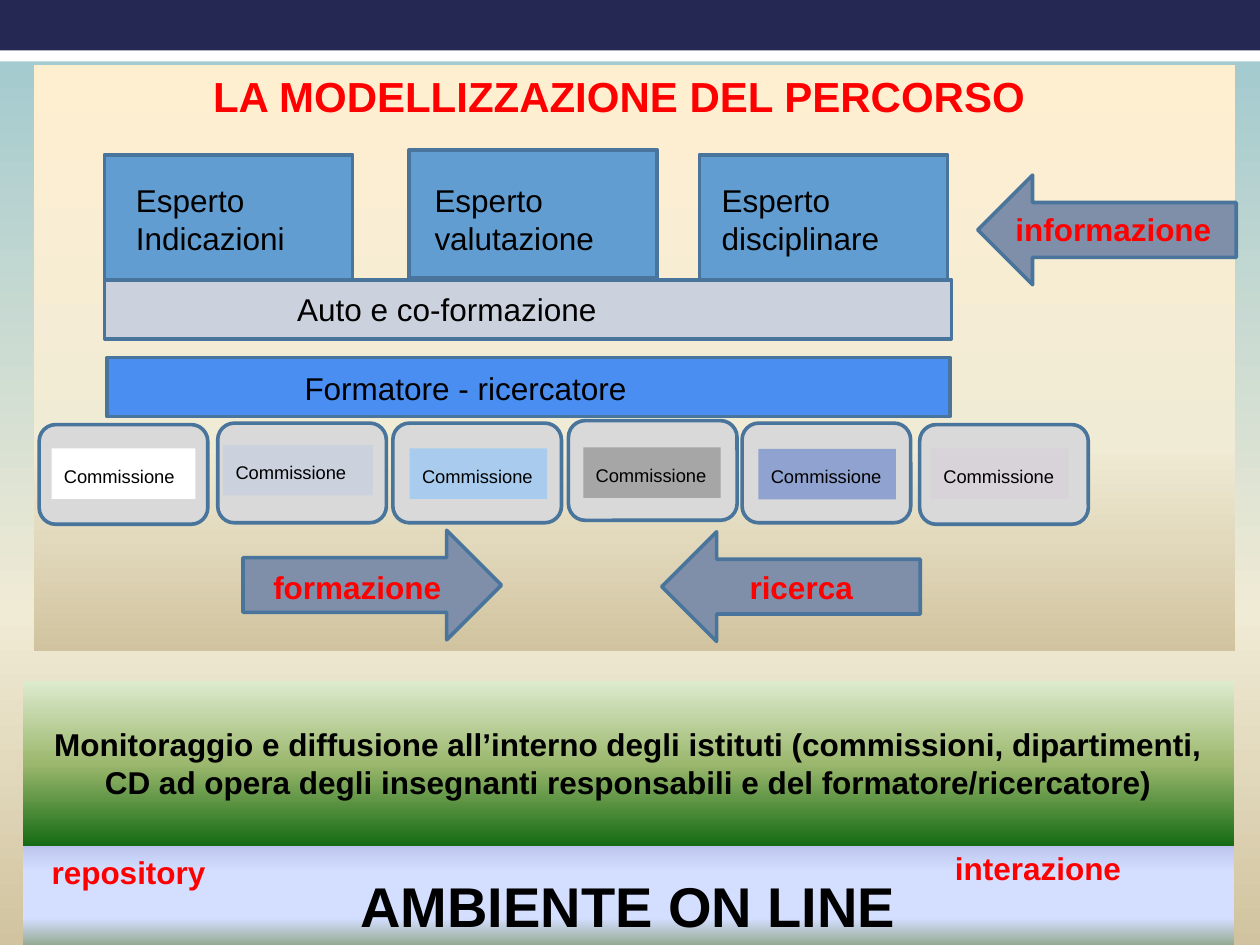
from pptx import Presentation
from pptx.dml.color import RGBColor
from pptx.enum.shapes import MSO_SHAPE
from pptx.enum.text import MSO_ANCHOR, PP_ALIGN
from pptx.oxml.ns import qn
from pptx.oxml.xmlchemy import OxmlElement
from pptx.util import Cm, Pt

RECT = MSO_SHAPE.RECTANGLE
ROUNDED = MSO_SHAPE.ROUNDED_RECTANGLE
ARROW = MSO_SHAPE.RIGHT_ARROW
LEFT, CENTER = PP_ALIGN.LEFT, PP_ALIGN.CENTER
TOP, MIDDLE, BOTTOM = MSO_ANCHOR.TOP, MSO_ANCHOR.MIDDLE, MSO_ANCHOR.BOTTOM
rgb = RGBColor.from_string
BLACK, RED, OUTLINE = "000000", "FF0000", "49749B"

prs = Presentation()
prs.slide_width, prs.slide_height = Cm(25.4), Cm(19.05)
s = prs.slides.add_slide(prs.slide_layouts[6])


def paint(fill, element, colour):
    """Fill with one colour, or top to bottom with a list of (percent, colour)."""
    if isinstance(colour, str):
        fill.solid()
        fill.fore_color.rgb = rgb(colour)
        return
    fill.gradient()
    fill.gradient_angle = 270
    stops = element.find(".//" + qn("a:gsLst"))
    for old in list(stops):
        stops.remove(old)
    for percent, value in colour:
        gs = OxmlElement("a:gs")
        gs.set("pos", str(percent * 1000))
        clr = OxmlElement("a:srgbClr")
        clr.set("val", value)
        gs.append(clr)
        stops.append(gs)


def add(x, y, w, h, text="", fill=None, kind=RECT, line=None, size=18,
        colour=BLACK, bold=False, align=LEFT, anchor=TOP):
    """Add a filled shape, or a text box when there is no fill."""
    place = Cm(x), Cm(y), Cm(w), Cm(h)
    if fill is None:
        sp = s.shapes.add_textbox(*place)
    else:
        sp = s.shapes.add_shape(kind, *place)
        sp.shadow.inherit = False
        paint(sp.fill, sp._element, fill)
        if line:
            sp.line.color.rgb = rgb(line)
            sp.line.width = Pt(2.08)
        else:
            sp.line.fill.background()
    if text:
        tf = sp.text_frame
        tf.word_wrap = True
        tf.vertical_anchor = anchor
        p = tf.paragraphs[0]
        p.text = text
        p.alignment = align
        p.font.name = "Arial"
        p.font.size = Pt(size)
        p.font.bold = bold
        p.font.color.rgb = rgb(colour)
    return sp


# Background, white strip and main panel
sand = [(65, "F0EBD5"), (100, "D1C39F")]
paint(s.background.fill, s._element, [(0, "9CC7CE")] + sand)
add(0, 0.61, 25.4, 0.63, fill="FFFFFF")
add(0.69, 1.32, 24.21, 11.81, fill=[(0, "FFEFD1")] + sand)

# Experts: box left and top, text left and width
for x, y, text_x, text_w, topic in [
    (2.11, 3.12, 2.49, 4.19, "Indicazioni"),
    (8.25, 3.02, 8.51, 4.01, "valutazione"),
    (14.1, 3.12, 14.3, 4.6, "disciplinare"),
]:
    add(x, y, 5, 2.59, fill="629DD1", line=OUTLINE)
    add(text_x, 3.53, text_w, 1.8, "Esperto " + topic)

# Training bars
for x, y, w, fill, text_x, text_y, text_w, text in [
    (2.11, 5.64, 17.07, "CCD2DD", 5.74, 5.72, 8.71, "Auto e co-formazione"),
    (2.16, 7.21, 16.99, "4A8EF2", 5.89, 7.32, 9.5, "Formatore - ricercatore"),
]:
    add(x, y, w, 1.19, fill=fill, line=OUTLINE)
    add(text_x, text_y, text_w, 1.02, text)

# Committees: rounded frame and coloured label
for x, y, label_x, label_y, label_w, fill in [
    (0.79, 8.56, 1.04, 9.04, 2.9, "FFFFFF"),
    (4.39, 8.53, 4.5, 8.97, 3.02, "CCD2DD"),
    (7.92, 8.53, 8.26, 9.04, 2.77, "A9CCEE"),
    (11.46, 8.48, 11.76, 9.02, 2.77, "A6A6A6"),
    (14.96, 8.53, 15.29, 9.05, 2.77, "90A2CF"),
    (18.54, 8.56, 18.77, 9.04, 2.77, "D8D3D9"),
]:
    add(x, y, 3.4, 2.01, fill="D9D9D9", kind=ROUNDED, line=OUTLINE)
    sp = add(label_x, label_y, label_w, 1.02, "Commissione", fill=fill,
             size=10.5, anchor=BOTTOM)
    sp.text_frame.margin_bottom = Cm(0.24)

# Arrows with their labels
for x, y, turn, text_x, text_y, text_w, text in [
    (19.71, 3.53, 180, 20.22, 4.11, 4.47, "informazione"),
    (4.9, 10.69, 0, 5.26, 11.33, 4.06, "formazione"),
    (13.34, 10.72, 180, 14.86, 11.33, 3.51, "ricerca"),
]:
    sp = add(x, y, 5.21, 2.21, fill="7F8FA9", kind=ARROW, line=OUTLINE)
    sp.rotation = turn
    add(text_x, text_y, text_w, 1.02, text, colour=RED, bold=True)

# Online environment
add(0.46, 15.9, 24.41, 3.15, "AMBIENTE ON LINE", size=32, bold=True,
    fill=[(0, "8488C4"), (53, "D4DEFF"), (83, "D4DEFF"), (100, "96AB94")],
    align=CENTER, anchor=BOTTOM)
add(0.79, 17.07, 4.45, 1.02, "repository", colour=RED, bold=True)
add(19, 16.99, 4.19, 1.02, "interazione", colour=RED, bold=True)

# Monitoring band
add(0.46, 13.72, 24.41, 3.33,
    "Monitoraggio e diffusione all’interno degli istituti (commissioni, "
    "dipartimenti, CD ad opera degli insegnanti responsabili e del "
    "formatore/ricercatore)",
    fill=[(0, "DDEBCF"), (50, "9CB86E"), (100, "156B13")],
    bold=True, align=CENTER, anchor=MIDDLE)

# Top bar and title
add(0, 0, 25.4, 1.02, fill="242852")
add(2.13, 1.3, 20.7, 1.3, "LA MODELLIZZAZIONE DEL PERCORSO", size=24,
    colour=RED, bold=True, align=CENTER)

prs.save("out.pptx")
